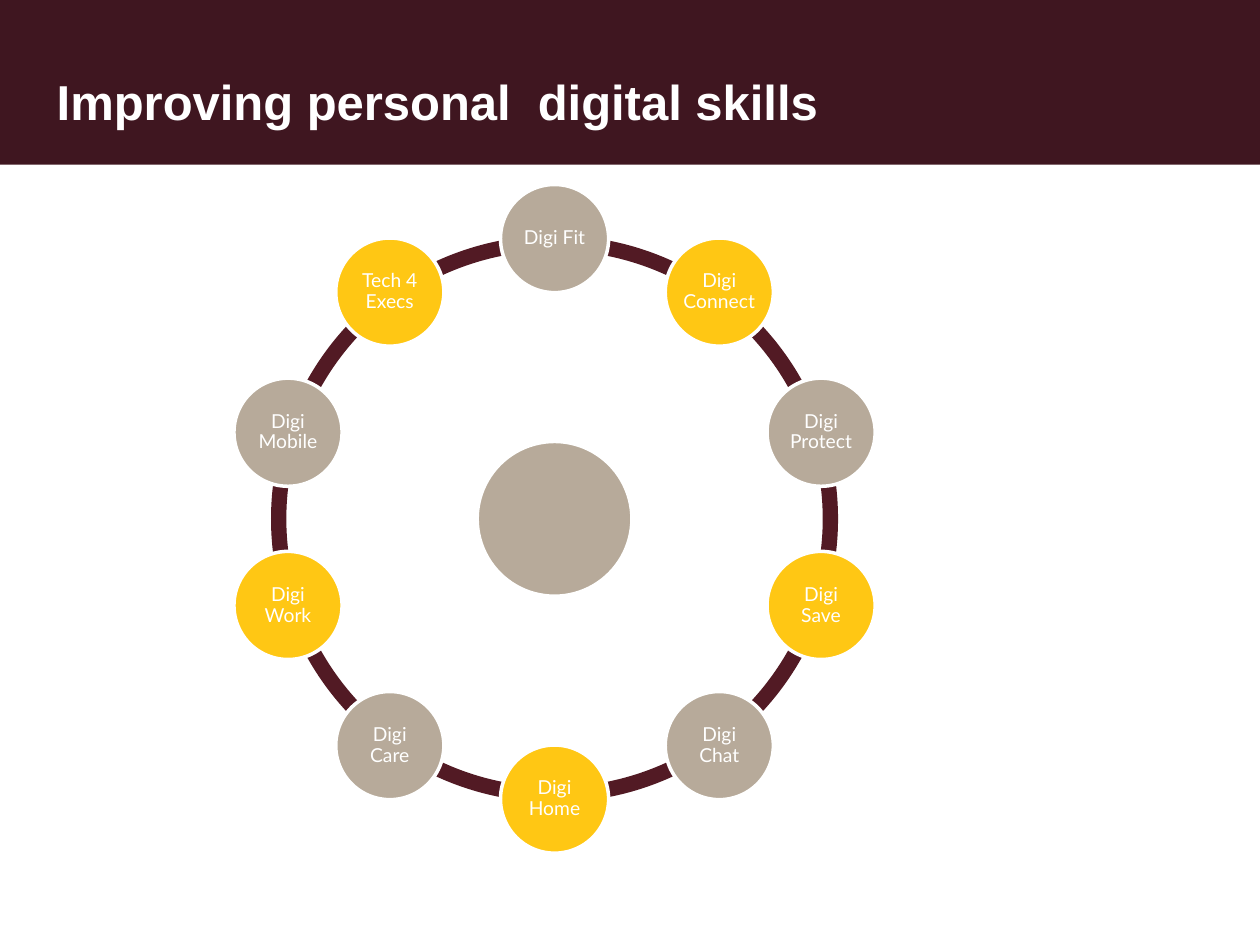
import math
from dataclasses import dataclass

import pptx
import pptx.dml.color
import pptx.enum.shapes
import pptx.enum.text
import pptx.util

Cm = pptx.util.Cm
Pt = pptx.util.Pt
Color = pptx.dml.color.RGBColor
Shape = pptx.enum.shapes.MSO_SHAPE
Align = pptx.enum.text.PP_ALIGN
Anchor = pptx.enum.text.MSO_ANCHOR
AutoSize = pptx.enum.text.MSO_AUTO_SIZE


@dataclass(frozen=True)
class Theme:
    white: Color = Color.from_string("FFFFFF")
    band: Color = Color.from_string("3F1620")
    ring: Color = Color.from_string("521A24")
    stone: Color = Color.from_string("B7AA9A")
    gold: Color = Color.from_string("FFC714")
    title_font: str = "Arial"
    title_size: int = 28
    label_font: str = "Lato"
    label_size: int = 11
    outline: int = 2


@dataclass(frozen=True)
class Wheel:
    center_x: float
    center_y: float
    orbit: float
    ring_diameter: float
    hub_diameter: float
    node_diameter: float
    thickness: float


@dataclass(frozen=True)
class Disc:
    x: float
    y: float
    diameter: float
    color: Color
    label: str = ""


THEME = Theme()
WHEEL = Wheel(11.18, 10.46, 5.65, 11.43, 3.12, 2.18, 0.027)
SKILLS = (
    "Digi Fit", "Digi Connect", "Digi Protect", "Digi Save", "Digi Chat",
    "Digi Home", "Digi Care", "Digi Work", "Digi Mobile", "Tech 4 Execs",
)
TOP_ANGLE = 270
ANGLE_UNIT = 0.6


def add_plain(page, kind, left: float, top: float, width: float, height: float, color: Color):
    shape = page.shapes.add_shape(kind, Cm(left), Cm(top), Cm(width), Cm(height))
    shape.shadow.inherit = False
    shape.fill.solid()
    shape.fill.fore_color.rgb = color
    shape.line.fill.background()
    return shape


def style_text(para, font: str, size: int, bold: bool) -> None:
    for span in para.runs:
        span.font.name = font
        span.font.size = Pt(size)
        span.font.bold = bold
        span.font.color.rgb = THEME.white


def add_arc(page, wheel: Wheel, start: float, end: float) -> None:
    size = wheel.ring_diameter
    arc = add_plain(page, Shape.BLOCK_ARC, wheel.center_x - size / 2,
                    wheel.center_y - size / 2, size, size, THEME.ring)
    arc.adjustments[0] = start % 360 * ANGLE_UNIT
    arc.adjustments[1] = end % 360 * ANGLE_UNIT
    arc.adjustments[2] = wheel.thickness


def add_disc(page, disc: Disc) -> None:
    size = disc.diameter
    circle = add_plain(page, Shape.OVAL, disc.x - size / 2, disc.y - size / 2,
                       size, size, disc.color)
    circle.line.color.rgb = THEME.white
    circle.line.width = Pt(THEME.outline)
    if not disc.label:
        return
    frame = circle.text_frame
    frame.margin_left = frame.margin_right = Cm(0.04)
    frame.margin_top = frame.margin_bottom = Cm(0.04)
    frame.word_wrap = True
    frame.vertical_anchor = Anchor.MIDDLE
    frame.text = disc.label
    para = frame.paragraphs[0]
    para.alignment = Align.CENTER
    para.line_spacing = 0.9
    style_text(para, THEME.label_font, THEME.label_size, False)


def add_wheel(page, wheel: Wheel) -> None:
    step = 360 / len(SKILLS)
    angles = [TOP_ANGLE + index * step for index in range(len(SKILLS))]
    for angle in angles:
        add_arc(page, wheel, angle, angle + step)
    add_disc(page, Disc(wheel.center_x, wheel.center_y, wheel.hub_diameter, THEME.stone))
    for index, (skill, angle) in enumerate(zip(SKILLS, angles)):
        turn = math.radians(angle)
        add_disc(page, Disc(
            wheel.center_x + wheel.orbit * math.cos(turn),
            wheel.center_y + wheel.orbit * math.sin(turn),
            wheel.node_diameter,
            THEME.gold if index % 2 else THEME.stone,
            skill,
        ))


def place_title(page, text: str) -> None:
    title = page.shapes.title
    title.left, title.top = Cm(0.89), Cm(1.32)
    title.width, title.height = Cm(16.03), Cm(1.45)
    frame = title.text_frame
    frame.text = text
    frame.word_wrap = False
    frame.auto_size = AutoSize.SHAPE_TO_FIT_TEXT
    frame.vertical_anchor = Anchor.TOP
    para = frame.paragraphs[0]
    para.alignment = Align.LEFT
    style_text(para, THEME.title_font, THEME.title_size, True)
    title.element.getparent().append(title.element)


def main() -> None:
    deck = pptx.Presentation()
    deck.slide_width, deck.slide_height = Cm(25.4), Cm(19.05)
    page = deck.slides.add_slide(deck.slide_layouts[5])
    page.background.fill.solid()
    page.background.fill.fore_color.rgb = THEME.white
    add_plain(page, Shape.RECTANGLE, 0, 0, 25.4, 3.32, THEME.band)
    add_wheel(page, WHEEL)
    place_title(page, "Improving personal  digital skills")
    deck.save("out.pptx")


if __name__ == "__main__":
    main()
